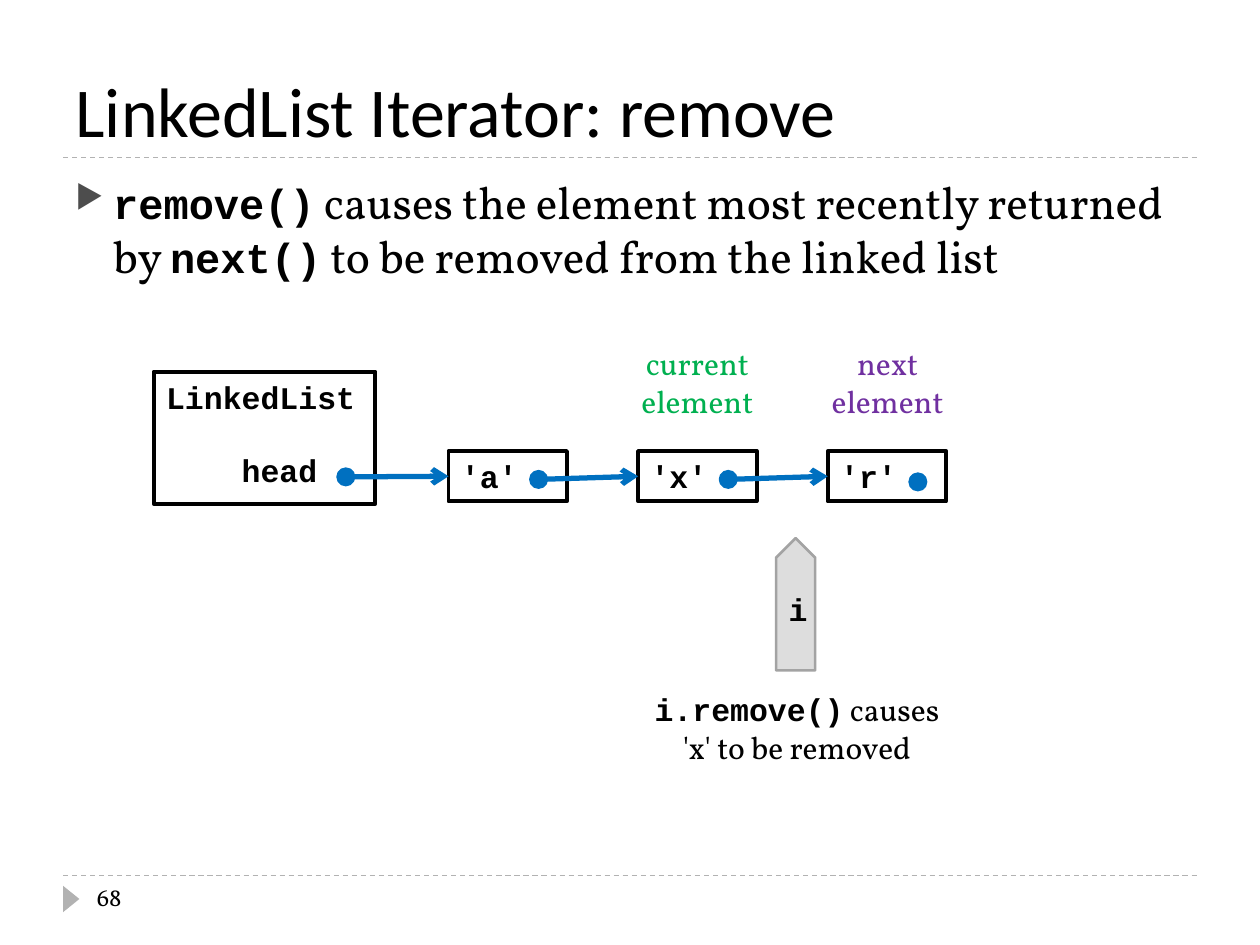
from pptx import Presentation
from pptx.dml.color import RGBColor
from pptx.enum.dml import MSO_LINE
from pptx.enum.shapes import MSO_CONNECTOR, MSO_SHAPE
from pptx.enum.text import MSO_ANCHOR, MSO_AUTO_SIZE, PP_ALIGN
from pptx.oxml.ns import qn
from pptx.util import Inches, Pt
from lxml.etree import SubElement

BLACK, BLUE, RULE_GRAY = "000000", "0070C0", "B2B2B2"
CODE, PROSE = "Courier New", "Vollkorn"
DOT_SIZE = 0.13


def color(hex_string):
    return RGBColor.from_string(hex_string)


def style_font(font, size, name, hex_string=BLACK, bold=False):
    font.size, font.name, font.bold = Pt(size), name, bold
    font.color.rgb = color(hex_string)


def add_shape(slide, preset, box, fill=None, line=None, width=1.5):
    shape = slide.shapes.add_shape(preset, *map(Inches, box))
    shape.shadow.inherit = False
    if fill:
        shape.fill.solid()
        shape.fill.fore_color.rgb = color(fill)
    else:
        shape.fill.background()
    if line:
        shape.line.color.rgb = color(line)
        shape.line.width = Pt(width)
    else:
        shape.line.fill.background()
    return shape


def add_line(slide, start, end, hex_string, width):
    line = slide.shapes.add_connector(
        MSO_CONNECTOR.STRAIGHT, *map(Inches, start + end))
    line.line.color.rgb = color(hex_string)
    line.line.width = Pt(width)
    SubElement(line._element.spPr, qn("a:effectLst"))
    return line


def add_text(slide, box, lines, align=PP_ALIGN.LEFT, wrap=True):
    frame = slide.shapes.add_textbox(*map(Inches, box)).text_frame
    frame.word_wrap = wrap
    for index, pieces in enumerate(lines):
        paragraph = frame.paragraphs[0] if index == 0 else frame.add_paragraph()
        paragraph.alignment = align
        for text, *style in pieces:
            run = paragraph.add_run()
            run.text = text
            style_font(run.font, *style)
    return frame


def add_code(frame, lines, align=PP_ALIGN.LEFT, anchor=MSO_ANCHOR.TOP):
    frame.vertical_anchor = anchor
    frame.text = "\n".join(lines)
    for paragraph in frame.paragraphs:
        paragraph.alignment = align
        style_font(paragraph.font, 18, CODE, bold=True)


def add_title(slide, box):
    title = slide.shapes.title
    title.left, title.top, title.width, title.height = map(Inches, box)
    frame = title.text_frame
    frame.text = "LinkedList Iterator: remove"
    frame.auto_size = MSO_AUTO_SIZE.NONE
    frame.vertical_anchor = MSO_ANCHOR.BOTTOM
    frame.paragraphs[0].alignment = PP_ALIGN.LEFT
    style_font(frame.paragraphs[0].font, 40, "Calibri")


def add_rules(slide, left, right, heights):
    for y in heights:
        rule = add_line(slide, (left, y), (right, y), RULE_GRAY, 0.75)
        rule.line.dash_style = MSO_LINE.DASH


def add_page_number(slide, box):
    marker = add_shape(slide, MSO_SHAPE.ISOSCELES_TRIANGLE,
                       (box[0] - 0.21, box[1] + 0.12, 0.21, 0.13), RULE_GRAY)
    marker.rotation = 90
    add_text(slide, box, [[("68", 14, PROSE)]])


def add_explanation(slide, box):
    frame = add_text(slide, box, [[
        ("remove()", 24, CODE, BLACK, True),
        (" causes the element most recently returned by ", 26, PROSE),
        ("next()", 24, CODE, BLACK, True),
        (" to be removed from the linked list", 26, PROSE),
    ]])
    paragraph = frame.paragraphs[0]
    paragraph.space_before = Pt(6)
    properties = paragraph._p.get_or_add_pPr()
    properties.set("marL", str(Inches(0.3)))
    properties.set("indent", str(-Inches(0.3)))
    bullet_color = SubElement(properties, qn("a:buClr"))
    SubElement(bullet_color, qn("a:srgbClr"), val="4D4D4D")
    SubElement(properties, qn("a:buSzPct"), val="76000")
    SubElement(properties, qn("a:buChar"), char="▶")


def add_dot(slide, left, top):
    add_shape(slide, MSO_SHAPE.OVAL, (left, top, DOT_SIZE, DOT_SIZE), BLUE, BLUE)
    return left + DOT_SIZE / 2, top + DOT_SIZE / 2


def add_list_box(slide, box):
    left, top, _, _ = box
    list_box = add_shape(slide, MSO_SHAPE.RECTANGLE, box, line=BLACK, width=2.25)
    add_code(list_box.text_frame, ["LinkedList", "head"])
    head = list_box.text_frame.paragraphs[1]
    head.space_before = Pt(20.4)
    head._p.get_or_add_pPr().set("marL", str(Inches(0.6)))
    return add_dot(slide, left + 1.46, top + 0.77)


def add_node(slide, box, element, dot_drop):
    left, top, _, _ = box
    node = add_shape(slide, MSO_SHAPE.RECTANGLE, box, line=BLACK, width=2.25)
    add_code(node.text_frame, [element])
    return node, add_dot(slide, left + 0.65, top + dot_drop)


def add_link(slide, start, node):
    link = add_line(slide, start, start, BLUE, 3)
    link.end_connect(node, 1)
    SubElement(link.line._get_or_add_ln(), qn("a:tailEnd"), type="arrow")


def add_linked_list(slide, left, top):
    link_start = add_list_box(slide, (left, top, 1.76, 1.05))
    for index, (element, dot_drop) in enumerate(
            [("'a'", 0.16), ("'x'", 0.16), ("'r'", 0.18)]):
        box = (left + 2.34 + index * 1.505, top + 0.63, 0.94, 0.4)
        node, next_start = add_node(slide, box, element, dot_drop)
        add_link(slide, link_start, node)
        link_start = next_start


def add_element_label(slide, box, role, hex_string):
    lines = [[(word, 18, PROSE, hex_string)] for word in (role, "element")]
    add_text(slide, box, lines, PP_ALIGN.CENTER, wrap=False)


def add_iterator(slide, box):
    iterator = add_shape(slide, MSO_SHAPE.PENTAGON, box, "DDDDDD", "A3A3A3")
    iterator.rotation = 270
    add_code(iterator.text_frame, ["i"], PP_ALIGN.CENTER, MSO_ANCHOR.MIDDLE)
    iterator.text_frame._txBody.bodyPr.set("vert", "vert")


def add_remove_note(slide, box):
    add_text(slide, box, [
        [("i.remove()", 18, CODE, BLACK, True), (" causes", 18, PROSE)],
        [("'x' to be removed", 18, PROSE)],
    ], PP_ALIGN.CENTER, wrap=False)


def main():
    deck = Presentation()
    deck.slide_width, deck.slide_height = Inches(10), Inches(7.5)
    slide = deck.slides.add_slide(deck.slide_layouts[5])
    add_rules(slide, 0.5, 9.5, (1.25, 6.95))
    add_title(slide, (0.5, 0.17, 9, 1.08))
    add_explanation(slide, (0.5, 1.33, 9, 5.4))
    add_page_number(slide, (0.67, 6.95, 2.17, 0.4))
    add_linked_list(slide, 1.22, 2.95)
    add_element_label(slide, (4.99, 2.68, 1.09, 0.71), "current", "00B050")
    add_element_label(slide, (6.5, 2.68, 1.09, 0.71), "next", "7030A0")
    add_iterator(slide, (5.79, 4.64, 1.05, 0.31))
    add_remove_note(slide, (5.09, 5.43, 2.47, 0.71))
    deck.save("out.pptx")


if __name__ == "__main__":
    main()
